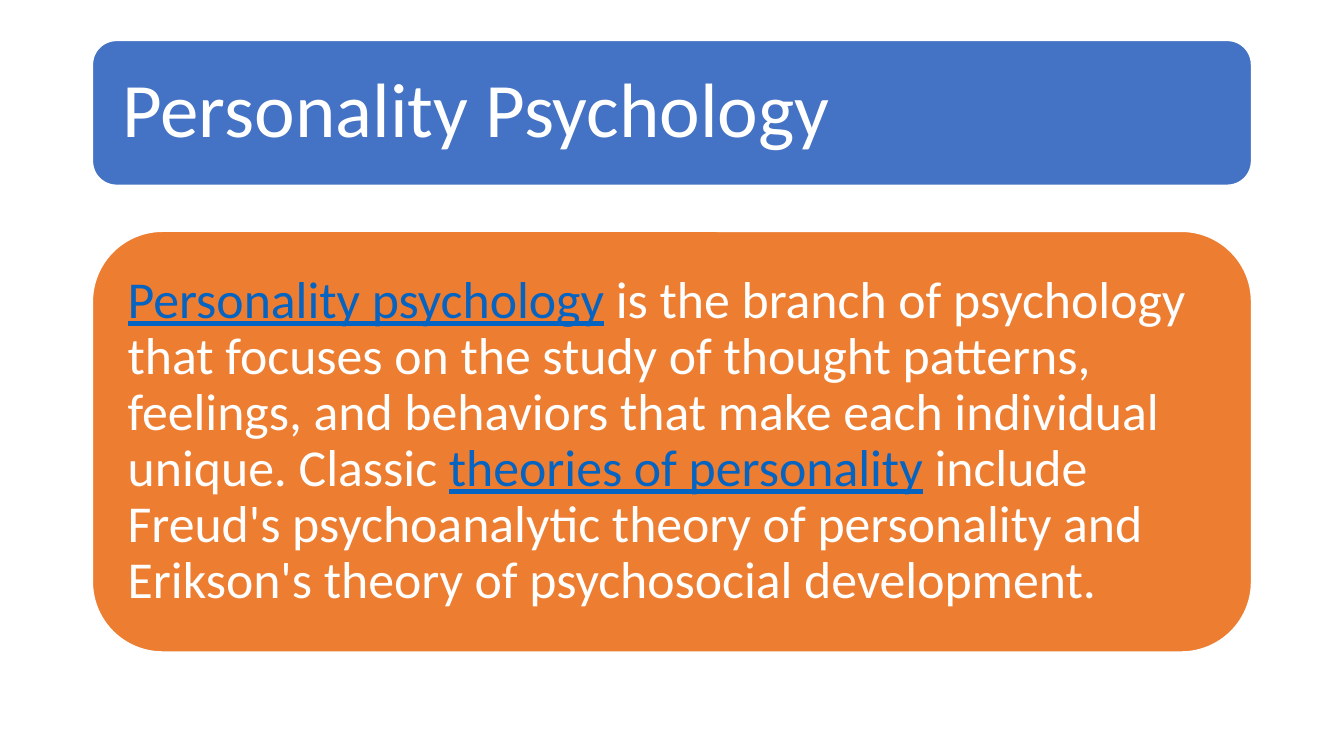
import math
from dataclasses import dataclass

import pptx
import pptx.dml.color
import pptx.enum.shapes
import pptx.enum.text
import pptx.util

TITLE = [("Personality Psychology", False)]
BODY = [
    ("Personality psychology", True),
    (" is the branch of psychology that focuses on the study of thought patterns, "
     "feelings, and behaviors that make each individual unique. Classic ", False),
    ("theories of personality", True),
    (" include Freud's psychoanalytic theory of personality "
     "and Erikson's theory of psychosocial development.", False),
]


@dataclass(frozen=True)
class Theme:
    font: str = "Calibri"
    title_size: int = 55
    body_size: int = 37
    title_fill: str = "4472C4"
    body_fill: str = "ED7D31"
    text: str = "FFFFFF"
    link: str = "0563C1"
    outline: str = "FFFFFF"


THEME = Theme()
LEFT, WIDTH = 2.33, 29.21
CORNER = 1 / 6
Cm = pptx.util.Cm


def rgb(value):
    return pptx.dml.color.RGBColor.from_string(value)


def add_panel(s, top, height, fill):
    sp = s.shapes.add_shape(pptx.enum.shapes.MSO_SHAPE.ROUNDED_RECTANGLE,
                            Cm(LEFT), Cm(top), Cm(WIDTH), Cm(height))
    sp.adjustments[0] = CORNER
    sp.shadow.inherit = False
    sp.fill.solid()
    sp.fill.fore_color.rgb = rgb(fill)
    sp.line.color.rgb = rgb(THEME.outline)
    sp.line.width = pptx.util.Pt(1)
    return sp


def place_inside(sp, top, height):
    inset = height * CORNER * (1 - math.sqrt(0.5))
    sp.left, sp.top = Cm(LEFT + inset), Cm(top + inset)
    sp.width, sp.height = Cm(WIDTH - 2 * inset), Cm(height - 2 * inset)


def write_text(sp, text, size, margin):
    tf = sp.text_frame
    tf.word_wrap = True
    tf.auto_size = pptx.enum.text.MSO_AUTO_SIZE.NONE
    tf.vertical_anchor = pptx.enum.text.MSO_ANCHOR.MIDDLE
    tf.margin_left = tf.margin_right = Cm(margin)
    tf.margin_top = tf.margin_bottom = Cm(margin)
    p = tf.paragraphs[0]
    p.alignment = pptx.enum.text.PP_ALIGN.LEFT
    p.line_spacing = 0.9
    for part, is_link in text:
        r = p.add_run()
        r.text = part
        r.font.name = THEME.font
        r.font.size = pptx.util.Pt(size)
        r.font.underline = is_link
        r.font.color.rgb = rgb(THEME.link if is_link else THEME.text)


def main():
    prs = pptx.Presentation()
    prs.slide_width, prs.slide_height = Cm(33.87), Cm(19.05)
    s = prs.slides.add_slide(prs.slide_layouts[5])

    top, height = 1.02, 3.65
    panel = add_panel(s, top, height, THEME.title_fill)
    title = s.shapes.title
    panel.element.addnext(title.element)
    place_inside(title, top, height)
    write_text(title, TITLE, THEME.title_size, margin=0.58)

    top, height = 5.83, 10.6
    add_panel(s, top, height, THEME.body_fill)
    body = s.shapes.add_textbox(0, 0, 0, 0)
    place_inside(body, top, height)
    write_text(body, BODY, THEME.body_size, margin=0.37)

    prs.save("out.pptx")


if __name__ == "__main__":
    main()
